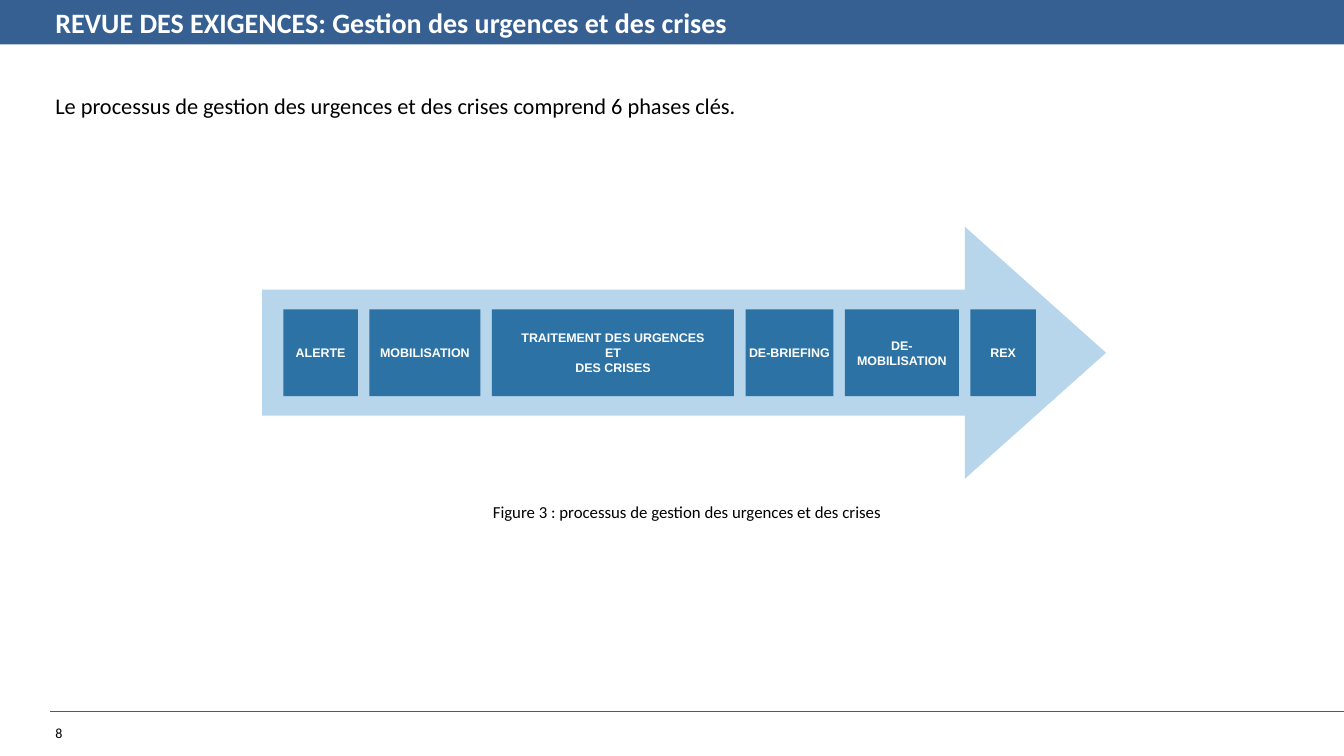
"""Build the slide on the six phases of emergency and crisis management."""
from dataclasses import dataclass

from pptx import Presentation
from pptx.dml.color import RGBColor
from pptx.enum.shapes import MSO_CONNECTOR, MSO_SHAPE
from pptx.enum.text import MSO_ANCHOR, PP_ALIGN
from pptx.oxml.ns import qn
from pptx.util import Inches, Pt

TITLE = "REVUE DES EXIGENCES: Gestion des urgences et des crises"
INTRO = "Le processus de gestion des urgences et des crises comprend 6 phases clés."
CAPTION = "Figure 3 : processus de gestion des urgences et des crises"
PAGE_NUMBER = "8"
PHASES = [
    ("ALERTE", 0.74),
    ("MOBILISATION", 1.1),
    ("TRAITEMENT DES URGENCES\nET\nDES CRISES", 2.4),
    ("DE-BRIEFING", 0.87),
    ("DE-MOBILISATION", 1.13),
    ("REX", 0.65),
]


@dataclass(frozen=True)
class Theme:
    """Colours, fonts and type sizes of the slide."""
    banner: str = "376092"
    arrow: str = "B7D5EB"
    phase: str = "2D72A4"
    light: str = "FFFFFF"
    dark: str = "000000"
    text_font: str = "Calibri"
    phase_font: str = "Arial"
    title_size: float = 20
    intro_size: float = 16
    caption_size: float = 12
    number_size: float = 10
    phase_size: float = 8.9


THEME = Theme()
WIDTH, HEIGHT = 13.33, 7.5
MARGIN = 0.45
BANNER_HEIGHT = 0.44
RULE_LEFT, RULE_TOP = 0.5, 7.06
ARROW_LEFT, ARROW_TOP, ARROW_WIDTH, ARROW_HEIGHT = 2.6, 2.25, 8.37, 2.5
PHASE_LEFT, PHASE_HEIGHT, PHASE_GAP = 2.81, 0.86, 0.115
PHASE_INSET = 0.03


def write(shape, text, size, color, font=THEME.text_font, bold=False,
          align=PP_ALIGN.LEFT, anchor=MSO_ANCHOR.TOP):
    """Put formatted text in a shape."""
    frame = shape.text_frame
    frame.word_wrap = True
    frame.vertical_anchor = anchor
    frame.text = text
    for para in frame.paragraphs:
        para.alignment = align
        for span in para.runs:
            span.font.name = font
            span.font.size = Pt(size)
            span.font.bold = bold
            span.font.color.rgb = RGBColor.from_string(color)


def add_text(page, place, text, size, color, **style):
    """Add a text box at left, top, width, height."""
    box = page.shapes.add_textbox(*map(Inches, place))
    write(box, text, size, color, **style)


def add_block(page, kind, place, color):
    """Add a flat shape without outline."""
    block = page.shapes.add_shape(kind, *map(Inches, place))
    block.shadow.inherit = False
    block.fill.solid()
    block.fill.fore_color.rgb = RGBColor.from_string(color)
    block.line.fill.background()
    return block


def add_frame(page):
    """Add the title banner, footer rule and page number."""
    add_block(page, MSO_SHAPE.RECTANGLE, (0, 0, WIDTH, BANNER_HEIGHT), THEME.banner)
    add_text(page, (MARGIN, 0, 10.47, BANNER_HEIGHT), TITLE, THEME.title_size,
             THEME.light, bold=True, anchor=MSO_ANCHOR.MIDDLE)
    rule = page.shapes.add_connector(
        MSO_CONNECTOR.STRAIGHT, *map(Inches, (RULE_LEFT, RULE_TOP, WIDTH, RULE_TOP)))
    rule.line.color.rgb = RGBColor.from_string(THEME.banner)
    rule.line.width = Pt(0.75)
    properties = rule._element.spPr
    properties.append(properties.makeelement(qn("a:effectLst"), {}))
    add_text(page, (MARGIN, 7.14, 0.71, 0.27), PAGE_NUMBER, THEME.number_size, THEME.dark)


def add_process(page):
    """Add the arrow and its row of phases."""
    arrow = add_block(page, MSO_SHAPE.RIGHT_ARROW,
                      (ARROW_LEFT, ARROW_TOP, ARROW_WIDTH, ARROW_HEIGHT), THEME.arrow)
    arrow.adjustments[0] = 0.5
    arrow.adjustments[1] = 0.56
    left = PHASE_LEFT
    top = ARROW_TOP + (ARROW_HEIGHT - PHASE_HEIGHT) / 2
    for label, width in PHASES:
        phase = add_block(page, MSO_SHAPE.ROUNDED_RECTANGLE,
                          (left, top, width, PHASE_HEIGHT), THEME.phase)
        phase.adjustments[0] = 0
        frame = phase.text_frame
        frame.margin_left = frame.margin_right = Inches(PHASE_INSET)
        write(phase, label, THEME.phase_size, THEME.light, font=THEME.phase_font,
              bold=True, align=PP_ALIGN.CENTER, anchor=MSO_ANCHOR.MIDDLE)
        left += width + PHASE_GAP


def main():
    """Assemble and save the deck."""
    deck = Presentation()
    deck.slide_width, deck.slide_height = Inches(WIDTH), Inches(HEIGHT)
    page = deck.slides.add_slide(deck.slide_layouts[6])
    add_frame(page)
    add_text(page, (MARGIN, 0.86, 12.39, 5.88), INTRO, THEME.intro_size,
             THEME.dark, align=PP_ALIGN.JUSTIFY)
    add_text(page, (3.48, 4.93, 6.67, 0.32), CAPTION, THEME.caption_size,
             THEME.dark, align=PP_ALIGN.CENTER)
    add_process(page)
    deck.save("out.pptx")


if __name__ == "__main__":
    main()
